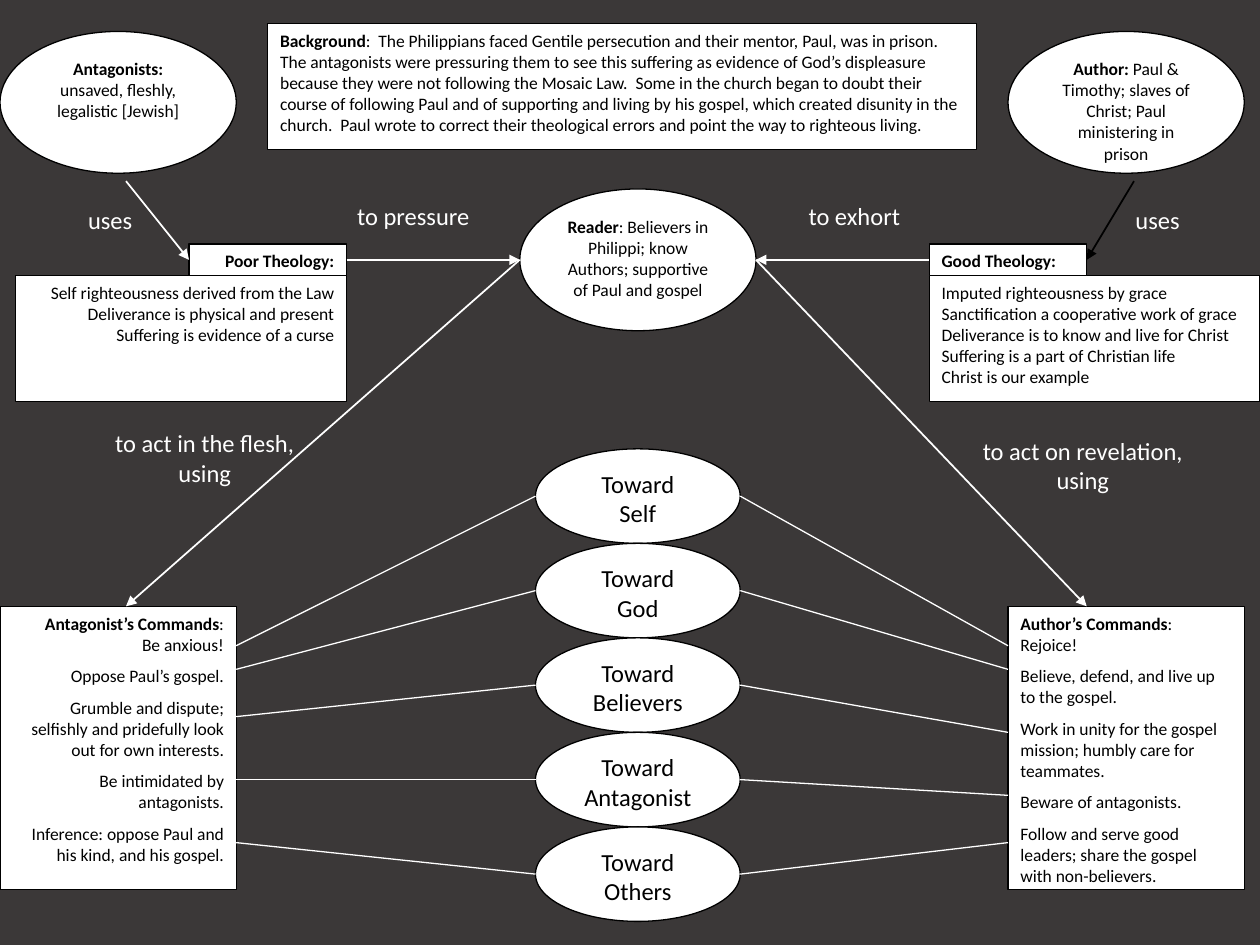
"""Build a one-slide map of the argument of Philippians."""
import pptx
import pptx.dml.color
import pptx.enum.shapes
import pptx.enum.text
import pptx.oxml
import pptx.oxml.ns
import pptx.util

INK = {"back": "3B3838", "white": "FFFFFF", "black": "000000"}
WIDE, HIGH = pptx.util.Inches(10), pptx.util.Inches(7.5)
COLS, ROWS = 160, 120
FORM = pptx.enum.shapes.MSO_SHAPE
SIDE = pptx.enum.text.PP_ALIGN
GOALS = ["Self", "God", "Believers", "Antagonist", "Others"]


def hue(name):
    """Return the named colour."""
    return pptx.dml.color.RGBColor.from_string(INK[name])


def col(n):
    """Return the length of n columns."""
    return round(WIDE * n / COLS)


def row(n):
    """Return the length of n rows."""
    return round(HIGH * n / ROWS)


def write(frame, paras, size, ink, align, gap=0):
    """Write paragraphs, each a (bold, plain) pair, with gap before the third on."""
    frame.word_wrap = True
    frame.vertical_anchor = pptx.enum.text.MSO_ANCHOR.TOP
    for i, pair in enumerate(paras):
        para = frame.paragraphs[0] if i == 0 else frame.add_paragraph()
        para.alignment = align
        if gap and i > 1:
            para.space_before = pptx.util.Pt(gap)
        for text, bold in zip(pair, (True, False)):
            if text:
                run = para.add_run()
                run.text = text
                run.font.name = "Calibri"
                run.font.size = pptx.util.Pt(size)
                run.font.bold = bold
                run.font.color.rgb = hue(ink)


def place(slide, box, form):
    """Add a preset shape in a grid box."""
    x, y, w, h = box
    shape = slide.shapes.add_shape(form, col(x), row(y), col(w), row(h))
    shape.shadow.inherit = False
    return shape


def card(slide, box, paras, form=FORM.RECTANGLE, align=SIDE.LEFT, size=10, gap=0):
    """Add a white outlined shape with text."""
    shape = place(slide, box, form)
    shape.fill.solid()
    shape.fill.fore_color.rgb = hue("white")
    shape.line.color.rgb = hue("black")
    shape.line.width = pptx.util.Pt(0.75)
    write(shape.text_frame, paras, size, "black", align, gap)


def label(slide, box, *lines):
    """Add white text in an unlined bracket shape."""
    shape = place(slide, box, FORM.DOUBLE_BRACKET)
    shape.fill.background()
    shape.line.fill.background()
    write(shape.text_frame, [("", line) for line in lines], 14, "white", SIDE.CENTER)


def link(slide, start, end, ink="white", width=1, arrow=True):
    """Join two grid points by a line, with an arrowhead if asked."""
    line = slide.shapes.add_connector(
        pptx.enum.shapes.MSO_CONNECTOR.STRAIGHT,
        col(start[0]), row(start[1]), col(end[0]), row(end[1]))
    line.line.color.rgb = hue(ink)
    line.line.width = pptx.util.Pt(width)
    props = line._element.spPr
    if arrow:
        edge = props.find(pptx.oxml.ns.qn("a:ln"))
        tip = pptx.oxml.parse_xml(
            f'<a:tailEnd {pptx.oxml.ns.nsdecls("a")} type="triangle"/>')
        edge.append(tip)
    props.append(pptx.oxml.parse_xml(
        f'<a:effectLst {pptx.oxml.ns.nsdecls("a")}/>'))


def oval(slide, box, *paras):
    """Add a person's ellipse."""
    card(slide, box, paras, FORM.OVAL, SIDE.CENTER)


def creed(slide, box, shift, title, lines, align):
    """Add a theology box whose short title tab sits on its top fifth."""
    x, y, w, h = box
    tab = h / 5
    card(slide, (x, y + tab, w, h - tab), [("", line) for line in lines], align=align)
    card(slide, (x + shift, y, 20, tab), [(title, "")], align=align)


def orders(slide, box, title, lines, align):
    """Add a list of commands."""
    paras = [(title, ":")] + [("", line) for line in lines]
    card(slide, box, paras, align=align, gap=6)


def goals(slide, box):
    """Stack one ellipse for each goal in equal steps."""
    x, y, w, h = box
    step = h / len(GOALS)
    for i, goal in enumerate(GOALS):
        card(slide, (x, y + i * step, w, step), [("", "Toward"), ("", goal)],
             FORM.OVAL, SIDE.CENTER, 14)


def fan(slide, box, near, far, rows):
    """Run lines from given rows at one edge to the middle of each goal."""
    top, step = box[1], box[3] / len(GOALS)
    for i, drop in enumerate(rows):
        link(slide, (near, top + drop), (far, top + (i + 0.5) * step),
             width=0.75, arrow=False)


def flow(slide):
    """Add the arrows between people, theology and commands, and their labels."""
    for start, end in [((44, 33), (66, 33)), ((118, 33), (96, 33)),
                       ((66, 33), (16, 77)), ((96, 33), (138, 77)),
                       ((16, 23), (24, 33))]:
        link(slide, start, end)
    link(slide, (144, 23), (138, 33), "black")
    label(slide, (8, 25, 12, 6), "uses")
    label(slide, (141, 25, 12, 6), "uses")
    label(slide, (43, 24.5, 19, 6), "to pressure")
    label(slide, (99, 24.5, 19, 6), "to exhort")
    label(slide, (12, 53, 28, 12), "to act in the flesh,", "using")
    label(slide, (121, 54, 33, 12), "to act on revelation,", "using")


def main():
    """Build and save the slide."""
    deck = pptx.Presentation()
    deck.slide_width, deck.slide_height = WIDE, HIGH
    slide = deck.slides.add_slide(deck.slide_layouts[6])
    slide.background.fill.solid()
    slide.background.fill.fore_color.rgb = hue("back")

    oval(slide, (0, 4, 30, 18), ("Antagonists:", ""),
         ("", "unsaved, fleshly, legalistic [Jewish]"))
    oval(slide, (128, 4, 30, 18),
         ("Author: ", "Paul & Timothy; slaves of Christ; Paul ministering in prison"))
    oval(slide, (66, 24, 30, 18),
         ("Reader", ": Believers in Philippi; know Authors; supportive of Paul and gospel"))
    card(slide, (34, 3, 90, 16), [(
        "Background",
        ":  The Philippians faced Gentile persecution and their mentor, Paul, was in "
        "prison. The antagonists were pressuring them to see this suffering as evidence "
        "of God’s displeasure because they were not following the Mosaic Law.  Some in "
        "the church began to doubt their course of following Paul and of supporting and "
        "living by his gospel, which created disunity in the church.  Paul wrote to "
        "correct their theological errors and point the way to righteous living.")])

    creed(slide, (2, 31, 42, 20), 22, "Poor Theology:", [
        "Self righteousness derived from the Law",
        "Deliverance is physical and present",
        "Suffering is evidence of a curse"], SIDE.RIGHT)
    creed(slide, (118, 31, 42, 20), 0, "Good Theology:", [
        "Imputed righteousness by grace",
        "Sanctification a cooperative work of grace",
        "Deliverance is to know and live for Christ",
        "Suffering is a part of Christian life",
        "Christ is our example"], SIDE.LEFT)

    orders(slide, (0, 77, 30, 36), "Antagonist’s Commands", [
        "Be anxious!", "Oppose Paul’s gospel.",
        "Grumble and dispute; selfishly and pridefully look out for own interests.",
        "Be intimidated by antagonists.",
        "Inference: oppose Paul and his kind, and his gospel."], SIDE.RIGHT)
    orders(slide, (128, 77, 30, 36), "Author’s Commands", [
        "Rejoice!", "Believe, defend, and live up to the gospel.",
        "Work in unity for the gospel mission; humbly care for teammates.",
        "Beware of antagonists.",
        "Follow and serve good leaders; share the gospel with non-believers."], SIDE.LEFT)

    stack = (68, 57, 26, 60)
    goals(slide, stack)
    fan(slide, stack, 30, 68, [25, 28, 34, 42, 50])
    fan(slide, stack, 128, 94, [25, 28, 36, 44, 50])
    flow(slide)
    deck.save("out.pptx")


if __name__ == "__main__":
    main()
